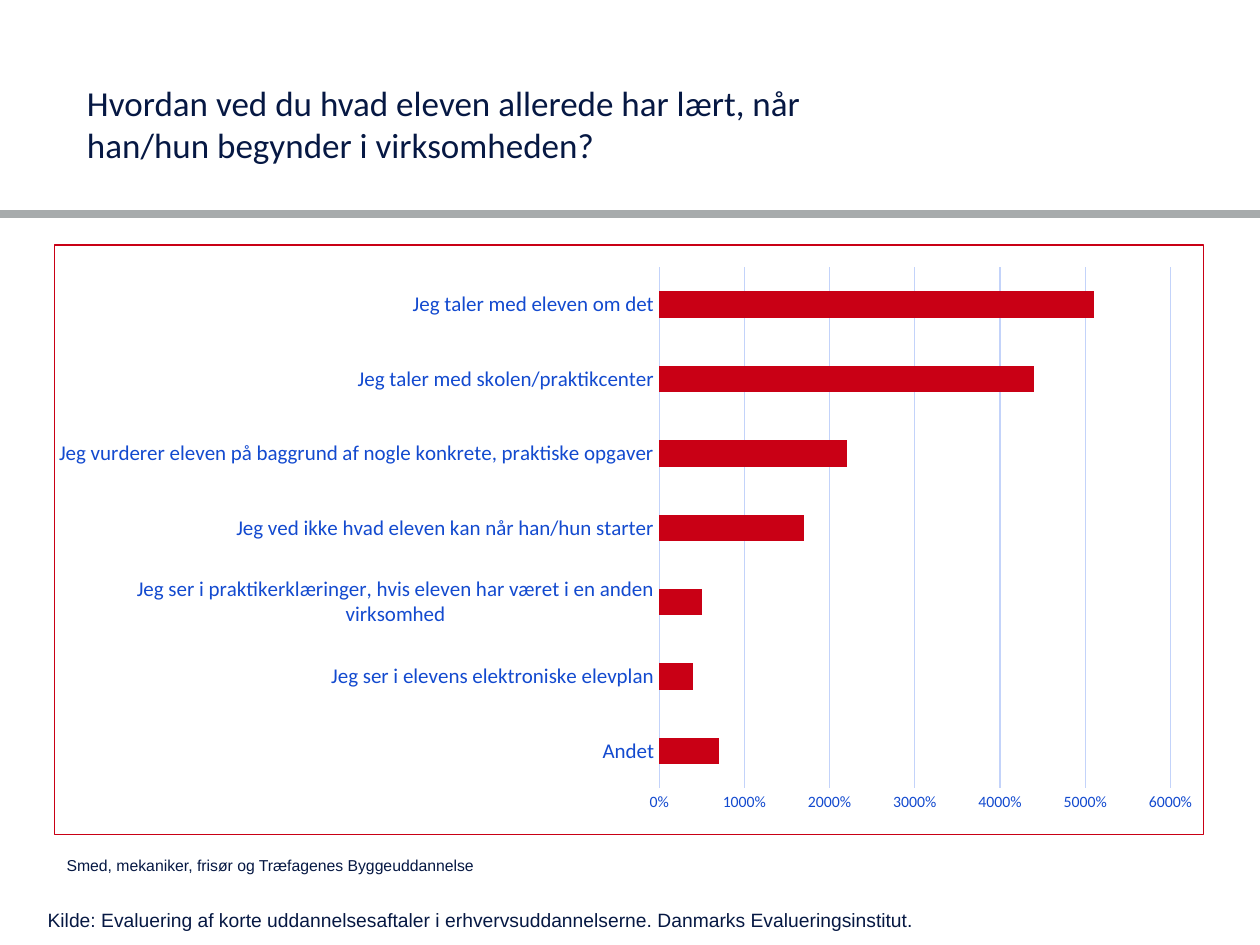
from lxml.etree import SubElement
from pptx import Presentation
from pptx.chart.data import CategoryChartData
from pptx.dml.color import RGBColor
from pptx.enum.chart import XL_CHART_TYPE, XL_TICK_MARK
from pptx.enum.shapes import MSO_CONNECTOR
from pptx.enum.text import MSO_ANCHOR, MSO_AUTO_SIZE, PP_ALIGN
from pptx.oxml import parse_xml
from pptx.oxml.ns import nsdecls, qn
from pptx.util import Inches, Pt

NAVY, BLUE, PALE_BLUE = "061843", "134ACF", "C3D3FA"
RED, GREY = "C90015", "A7ABAC"


def color(value):
    return RGBColor.from_string(value)


def style_font(font, name, size, value):
    font.name, font.size, font.bold = name, Pt(size), False
    font.color.rgb = color(value)


deck = Presentation()
deck.slide_width, deck.slide_height = Inches(10), Inches(7.5)
page = deck.slides.add_slide(deck.slide_layouts[5])

# Rule under the heading
rule = page.shapes.add_connector(
    MSO_CONNECTOR.STRAIGHT, Inches(0), Inches(1.7), Inches(10), Inches(1.7))
rule.line.color.rgb = color(GREY)
rule.line.width = Pt(4.5)
SubElement(rule._element.spPr, qn("a:effectLst"))

# Heading
title = page.shapes.title
title.left, title.top = Inches(0.59), Inches(0.6)
title.width, title.height = Inches(6.77), Inches(0.7)
frame = title.text_frame
frame.word_wrap = True
frame.auto_size = MSO_AUTO_SIZE.NONE
frame.vertical_anchor = MSO_ANCHOR.TOP
para = frame.paragraphs[0]
para.alignment = PP_ALIGN.LEFT
span = para.add_run()
span.text = "Hvordan ved du hvad eleven allerede har lært, når han/hun begynder i virksomheden?"
style_font(span.font, "Calibri", 20, NAVY)

# Source and note
captions = [
    (0.28, 7.16, 9.43, 0.29, 11,
     "Kilde: Evaluering af korte uddannelsesaftaler i erhvervsuddannelserne. "
     "Danmarks Evalueringsinstitut."),
    (0.43, 6.74, 6.61, 0.25, 9, "Smed, mekaniker, frisør og Træfagenes Byggeuddannelse"),
]
for left, top, width, height, size, text in captions:
    box = page.shapes.add_textbox(Inches(left), Inches(top), Inches(width), Inches(height))
    box.text_frame.word_wrap = True
    span = box.text_frame.paragraphs[0].add_run()
    span.text = text
    style_font(span.font, "Arial", size, NAVY)

# Bar chart of answers
answers = {
    "Andet": 7,
    "Jeg ser i elevens elektroniske elevplan": 4,
    "Jeg ser i praktikerklæringer, hvis eleven har været i en anden virksomhed": 5,
    "Jeg ved ikke hvad eleven kan når han/hun starter": 17,
    "Jeg vurderer eleven på baggrund af nogle konkrete, praktiske opgaver": 22,
    "Jeg taler med skolen/praktikcenter": 44,
    "Jeg taler med eleven om det": 51,
}
data = CategoryChartData(number_format="0%")
data.categories = list(answers)
data.add_series("Series 1", list(answers.values()))
chart = page.shapes.add_chart(
    XL_CHART_TYPE.BAR_CLUSTERED, Inches(0.43), Inches(1.94),
    Inches(9.13), Inches(4.69), data).chart
chart.has_legend = False
chart.has_title = False
style_font(chart.font, "Calibri", 10, NAVY)

plot = chart.plots[0]
plot.gap_width = 182
plot.vary_by_categories = False
bars = plot.series[0].format.fill
bars.solid()
bars.fore_color.rgb = color(RED)

for axis, size in ((chart.category_axis, 12), (chart.value_axis, 9)):
    axis.major_tick_mark = axis.minor_tick_mark = XL_TICK_MARK.NONE
    style_font(axis.tick_labels.font, "Calibri", size, BLUE)

values = chart.value_axis
values.minimum_scale, values.maximum_scale, values.major_unit = 0, 60, 10
values.tick_labels.number_format = "0%"
values.tick_labels.number_format_is_linked = False
values.format.line.fill.background()
values.has_major_gridlines = True
for line in (chart.category_axis.format.line, values.major_gridlines.format.line):
    line.color.rgb = color(PALE_BLUE)
    line.width = Pt(0.75)

# Fixed plot area, and a red frame around the chart
area = chart._chartSpace.chart.plotArea
for layout in area.findall(qn("c:layout")):
    area.remove(layout)
layout = parse_xml(f"<c:layout {nsdecls('c')}><c:manualLayout/></c:layout>")
settings = [("layoutTarget", "inner"), ("xMode", "edge"), ("yMode", "edge"),
            ("x", "0.526"), ("y", "0.038"), ("w", "0.445"), ("h", "0.883")]
for tag, value in settings:
    SubElement(layout[0], qn(f"c:{tag}")).set("val", value)
area.insert(0, layout)

border = parse_xml(
    f"<c:spPr {nsdecls('c', 'a')}><a:noFill/><a:ln w='{Pt(0.75)}'><a:solidFill>"
    f"<a:srgbClr val='{RED}'/></a:solidFill></a:ln></c:spPr>")
chart._chartSpace.chart.addnext(border)

deck.save("out.pptx")
